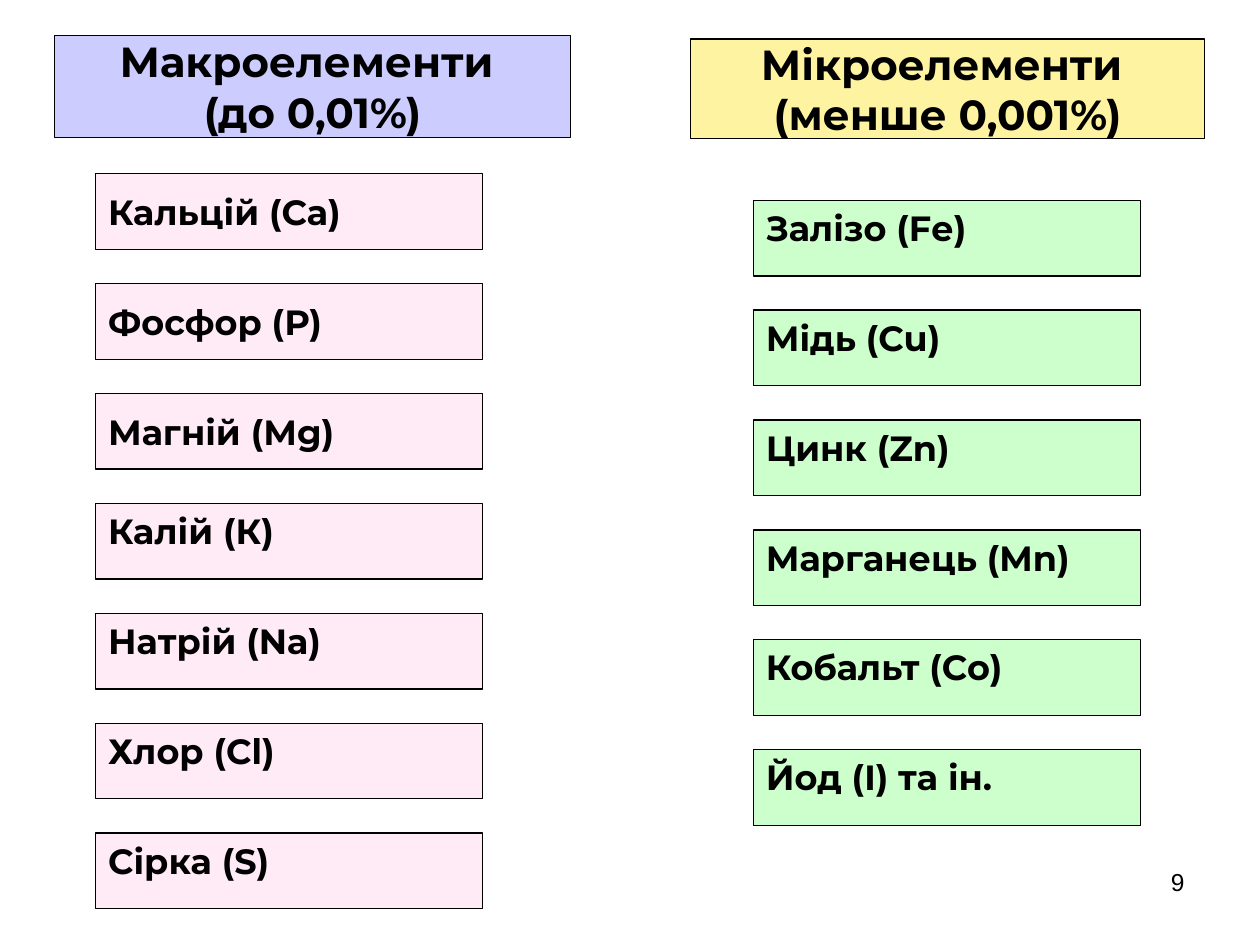
from pptx import Presentation
from pptx.dml.color import RGBColor
from pptx.enum.shapes import MSO_SHAPE
from pptx.enum.text import MSO_ANCHOR, MSO_AUTO_SIZE, PP_ALIGN
from pptx.util import Inches, Pt

COLORS = {
    "macro_head": "CCCCFF",
    "macro_item": "FFEBF6",
    "micro_head": "FEF3A0",
    "micro_item": "CCFFCC",
    "ink": "000000",
}
ITEM_W, ITEM_H, ITEM_STEP = 3.07, 0.6, 0.872

MACRO = ["Кальцій (Са)", "Фосфор (Р)", "Магній (Мg)", "Калій (К)",
         "Натрій (Nа)", "Хлор (Сl)", "Сірка (S)"]
MICRO = ["Залізо (Fе)", "Мідь (Cu)", "Цинк (Zn)", "Марганець (Mn)",
         "Кобальт (Co)", "Йод (I) та ін."]


def rgb(name):
    return RGBColor.from_string(COLORS[name])


def write(sp, text, size, align, anchor, font="Montserrat", bold=True):
    tf = sp.text_frame
    tf.text = text
    tf.word_wrap = True
    tf.auto_size = MSO_AUTO_SIZE.NONE
    tf.vertical_anchor = anchor
    for p in tf.paragraphs:
        p.alignment = align
        p.space_before = Pt(0)
        for r in p.runs:
            r.font.name = font
            r.font.size = Pt(size)
            r.font.bold = bold
            r.font.color.rgb = rgb("ink")


def paint(sp, fill):
    sp.fill.solid()
    sp.fill.fore_color.rgb = rgb(fill)
    sp.line.color.rgb = rgb("ink")
    sp.line.width = Pt(0.75)


def heading(sp, box, text, fill):
    sp.left, sp.top, sp.width, sp.height = (Inches(v) for v in box)
    paint(sp, fill)
    write(sp, text, 24, PP_ALIGN.CENTER, MSO_ANCHOR.MIDDLE)


def element_list(slide, left, top, names, fill, middle=0):
    """Stack element boxes; the first `middle` ones are vertically centred."""
    for i, name in enumerate(names):
        sp = slide.shapes.add_shape(
            MSO_SHAPE.RECTANGLE, Inches(left), Inches(top + i * ITEM_STEP),
            Inches(ITEM_W), Inches(ITEM_H))
        sp.shadow.inherit = False
        paint(sp, fill)
        anchor = MSO_ANCHOR.MIDDLE if i < middle else MSO_ANCHOR.TOP
        write(sp, name, 20, PP_ALIGN.LEFT, anchor)


def page_number(slide, box, number):
    sp = slide.shapes.add_textbox(*(Inches(v) for v in box))
    write(sp, number, 14, PP_ALIGN.RIGHT, MSO_ANCHOR.TOP, "Arial", False)


def main():
    prs = Presentation()
    prs.slide_width, prs.slide_height = Inches(10), Inches(7.5)
    slide = prs.slides.add_slide(prs.slide_layouts.get_by_name("Comparison"))

    # Column headings
    heads = {ph.placeholder_format.idx: ph for ph in slide.placeholders}
    heading(heads[1], (0.43, 0.28, 4.1, 0.81),
            "Макроелементи \n(до 0,01%)", "macro_head")
    heading(heads[3], (5.48, 0.31, 4.08, 0.79),
            "Мікроелементи \n(менше 0,001%)", "micro_head")
    for idx, ph in heads.items():
        if idx not in (1, 3):
            ph.element.getparent().remove(ph.element)

    # Element columns
    element_list(slide, 0.76, 1.38, MACRO, "macro_item", middle=3)
    element_list(slide, 5.98, 1.59, MICRO, "micro_item")

    # Page number
    page_number(slide, (7.17, 6.83, 2.33, 0.52), "9")
    prs.save("out.pptx")


if __name__ == "__main__":
    main()
